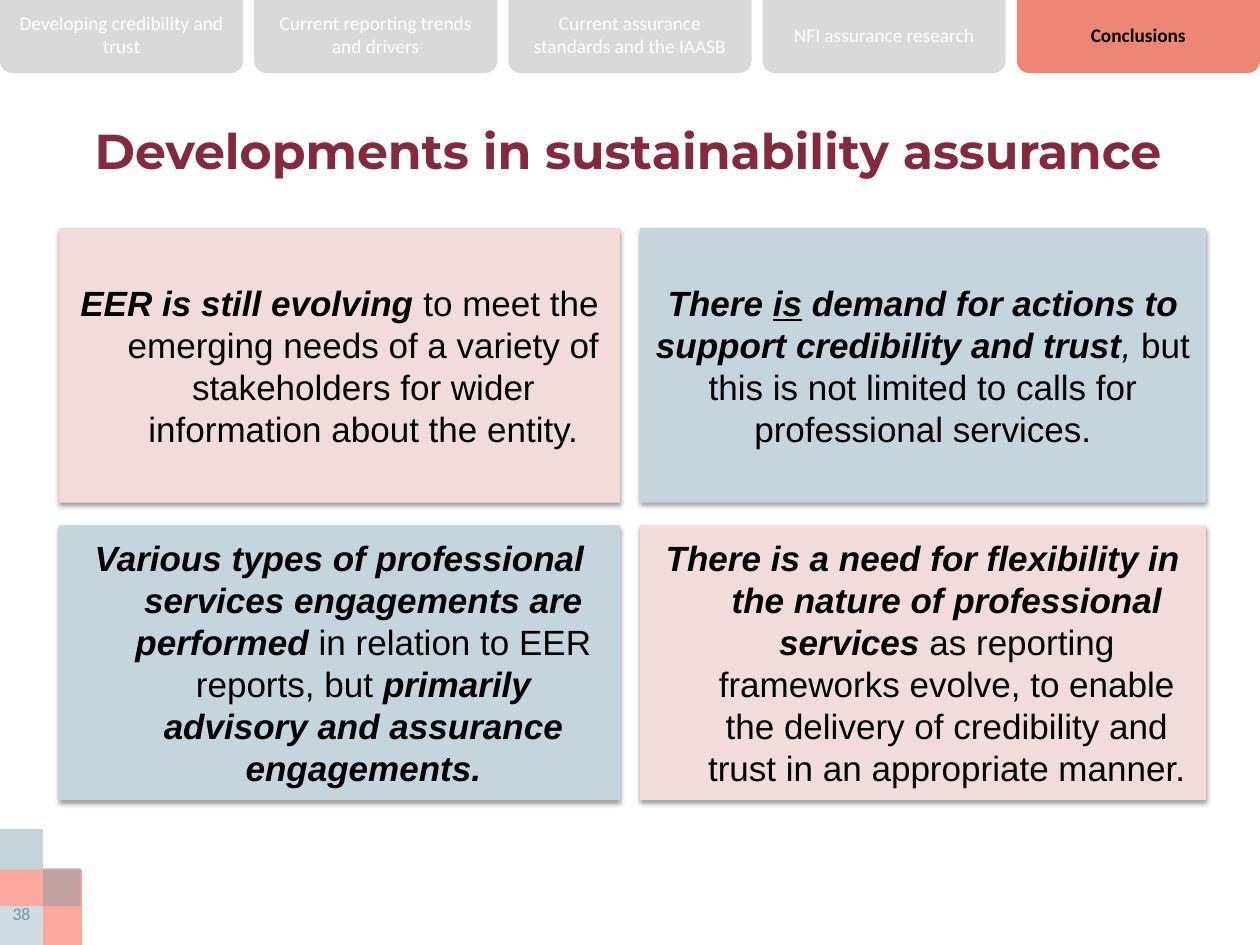
from dataclasses import dataclass

from lxml import etree
from pptx import Presentation
from pptx.dml.color import RGBColor
from pptx.enum.shapes import MSO_SHAPE
from pptx.enum.text import MSO_ANCHOR, PP_ALIGN
from pptx.oxml.ns import qn
from pptx.util import Inches, Pt

RECTANGLE = MSO_SHAPE.RECTANGLE
TAB_SHAPE = MSO_SHAPE.ROUND_2_SAME_RECTANGLE
TOP, MIDDLE = MSO_ANCHOR.TOP, MSO_ANCHOR.MIDDLE
CENTER = PP_ALIGN.CENTER


@dataclass(frozen=True)
class Theme:
    title: str = "85293F"
    black: str = "000000"
    white: str = "FFFFFF"
    tab: str = "D9D9D9"
    active_tab: str = "ED8674"
    pink: str = "F2DCDB"
    blue: str = "C5D5DC"
    salmon: str = "FAA99C"
    pale_blue: str = "CEDBE0"
    slate: str = "7198A9"
    title_size: float = 28
    body_size: float = 20
    tab_size: float = 11
    number_size: float = 10.1
    title_font: str = "Montserrat"
    body_font: str = "Arial"
    small_font: str = "Calibri"


class SlideBuilder:
    def __init__(self, slide, theme):
        self.slide = slide
        self.theme = theme

    def block(self, box, color, shape_type=RECTANGLE, alpha=None):
        shape = self.slide.shapes.add_shape(shape_type, *map(Inches, box))
        shape.shadow.inherit = False
        shape.line.fill.background()
        shape.fill.solid()
        shape.fill.fore_color.rgb = RGBColor.from_string(color)
        if alpha is not None:
            fill_color = shape._element.spPr.find(qn("a:solidFill"))[0]
            etree.SubElement(fill_color, qn("a:alpha"), val=str(alpha * 1000))
        return shape

    def add_text(self, shape, runs, font_format, color, anchor=MIDDLE):
        """Fill a shape with one centred paragraph of (text, format) runs."""
        frame = shape.text_frame
        frame.word_wrap = True
        frame.vertical_anchor = anchor
        paragraph = frame.paragraphs[0]
        paragraph.alignment = CENTER
        for text, run_format in runs:
            run = paragraph.add_run()
            run.text = text
            for name, value in {**font_format, **run_format}.items():
                setattr(run.font, name, value)
            run.font.color.rgb = RGBColor.from_string(color)
        return paragraph

    def label(self, box, text, font_format, color, anchor=MIDDLE):
        shape = self.slide.shapes.add_textbox(*map(Inches, box))
        self.add_text(shape, [(text, {})], font_format, color, anchor)

    def tab(self, box, text, active):
        theme = self.theme
        shape = self.block(box, theme.active_tab if active else theme.tab, TAB_SHAPE)
        shape.adjustments[0] = 0
        shape.adjustments[1] = 0.17
        shape.text_frame.margin_left = shape.text_frame.margin_right = Inches(0.07)
        font_format = {"name": theme.small_font, "size": Pt(theme.tab_size), "bold": active}
        self.add_text(shape, [(text, {})], font_format, theme.black if active else theme.white)

    def card(self, box, color, runs, hanging):
        theme = self.theme
        shape = self.block(box, color)
        self.drop_shadow(shape)
        font_format = {"name": theme.body_font, "size": Pt(theme.body_size)}
        paragraph = self.add_text(shape, runs, font_format, theme.black)
        if hanging:
            properties = paragraph._p.get_or_add_pPr()
            properties.set("marL", str(Inches(0.38)))
            properties.set("indent", str(Inches(-0.38)))

    def drop_shadow(self, shape):
        effects = shape._element.spPr.find(qn("a:effectLst"))
        shadow = etree.SubElement(
            effects, qn("a:outerShdw"), blurRad=str(Pt(3.1)), dist=str(Pt(1.6)),
            dir="5400000", rotWithShape="0")
        color = etree.SubElement(shadow, qn("a:srgbClr"), val=self.theme.black)
        etree.SubElement(color, qn("a:alpha"), val="38000")


STRONG = {"bold": True, "italic": True}
PLAIN = {"bold": False, "italic": False}

TABS = [
    "Developing credibility and trust",
    "Current reporting trends and drivers",
    "Current assurance standards and the IAASB",
    "NFI assurance research",
    "Conclusions",
]
TAB_WIDTH, TAB_HEIGHT = 1.93, 0.58

CARDS = [
    [("EER is still evolving ", STRONG),
     ("to meet the emerging needs of a variety of stakeholders for wider "
      "information about the entity.", PLAIN)],
    [("There ", STRONG),
     ("is", {**STRONG, "underline": True}),
     (" demand for actions to support credibility and trust", STRONG),
     (", ", {"bold": False, "italic": True}),
     ("but this is not limited to calls for professional services.", PLAIN)],
    [("Various types of professional services engagements are performed ", STRONG),
     ("in relation to EER reports, but ", PLAIN),
     ("primarily advisory and assurance engagements.", STRONG)],
    [("There is a need for flexibility in the nature of professional services ", STRONG),
     ("as reporting frameworks evolve, to enable the delivery of credibility "
      "and trust in an appropriate manner.", PLAIN)],
]
CARD_COLUMNS = [(0.47, 4.45), (5.08, 4.49)]
CARD_ROWS = [1.81, 4.17]
CARD_HEIGHT = 2.18


def main():
    presentation = Presentation()
    presentation.slide_width = Inches(10)
    presentation.slide_height = Inches(7.5)
    slide = presentation.slides.add_slide(presentation.slide_layouts[6])
    theme = Theme()
    builder = SlideBuilder(slide, theme)

    builder.block((0, 6.9, 0.65, 0.6), theme.salmon)
    builder.block((0, 7.19, 0.34, 0.31), theme.pale_blue)
    builder.block((0, 6.58, 0.34, 0.32), theme.slate, alpha=41)
    builder.block((0.34, 6.89, 0.3, 0.3), theme.slate, alpha=41)

    title_format = {"name": theme.title_font, "size": Pt(theme.title_size), "bold": True}
    builder.label((0.12, 0.69, 9.73, 1), "Developments in sustainability assurance",
                  title_format, theme.title)

    tab_pitch = (10 - TAB_WIDTH) / (len(TABS) - 1)
    for index, text in enumerate(TABS):
        box = (index * tab_pitch, 0, TAB_WIDTH, TAB_HEIGHT)
        builder.tab(box, text, active=text == "Conclusions")

    number_format = {"name": theme.small_font, "size": Pt(theme.number_size)}
    builder.label((-0.09, 7.12, 0.52, 0.43), "38", number_format, theme.slate, TOP)

    for index, runs in enumerate(CARDS):
        row, column = divmod(index, 2)
        left, width = CARD_COLUMNS[column]
        color = theme.pink if row == column else theme.blue
        builder.card((left, CARD_ROWS[row], width, CARD_HEIGHT), color, runs,
                     hanging=index != 1)

    presentation.save("out.pptx")


if __name__ == "__main__":
    main()
